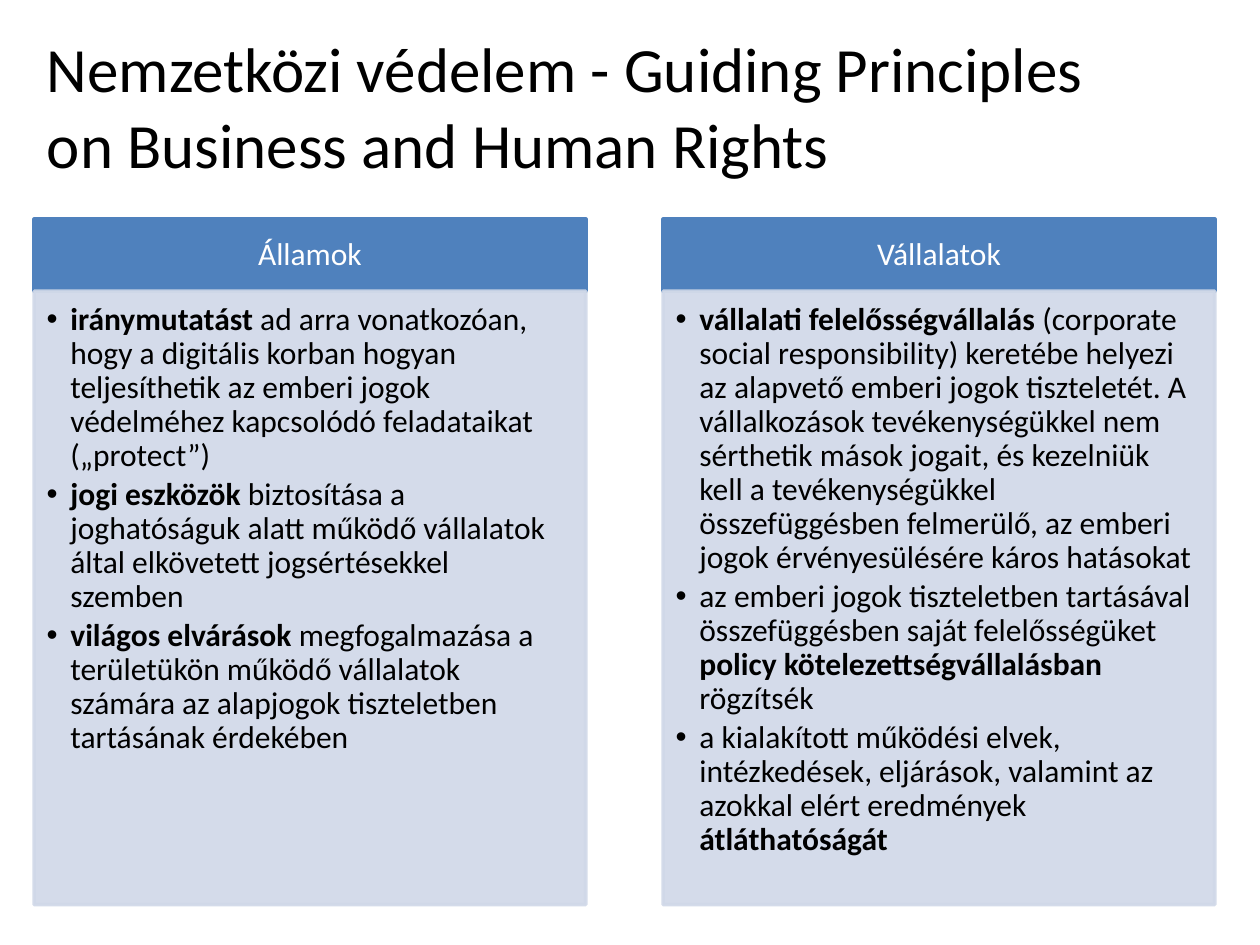
from lxml import etree
from pptx import Presentation
from pptx import util as u
from pptx.dml.color import RGBColor
from pptx.enum import shapes, text
from pptx.oxml.ns import qn

COLORS = {"ink": "000000", "paper": "FFFFFF", "header": "4F81BD", "body": "D0D8E8"}

TITLE = "Nemzetközi védelem - Guiding Principles on Business and Human Rights"

# Each bullet is a list of (text, bold) runs.
COLUMNS = [
    ("Államok", [
        [("iránymutatást ", True),
         ("ad arra vonatkozóan, hogy a digitális korban hogyan teljesíthetik az emberi "
          "jogok védelméhez kapcsolódó feladataikat („protect”)", False)],
        [("jogi eszközök ", True),
         ("biztosítása a joghatóságuk alatt működő vállalatok által elkövetett "
          "jogsértésekkel szemben", False)],
        [("világos elvárások ", True),
         ("megfogalmazása a területükön működő vállalatok számára az alapjogok "
          "tiszteletben tartásának érdekében", False)],
    ]),
    ("Vállalatok", [
        [("vállalati felelősségvállalás ", True),
         ("(corporate social responsibility) keretébe helyezi az alapvető emberi jogok "
          "tiszteletét. A vállalkozások tevékenységükkel nem sérthetik mások jogait, és "
          "kezelniük kell a tevékenységükkel összefüggésben felmerülő, az emberi jogok "
          "érvényesülésére káros hatásokat", False)],
        [("az emberi jogok tiszteletben tartásával összefüggésben saját "
          "felelősségüket ", False),
         ("policy kötelezettségvállalásban ", True),
         ("rögzítsék", False)],
        [("a kialakított működési elvek, intézkedések, eljárások, valamint az azokkal "
          "elért eredmények ", False),
         ("átláthatóságát", True)],
    ]),
]

LEFT, COLUMN_WIDTH, COLUMN_STEP = 0.69, 11.12, 12.68
HEADER_TOP, HEADER_HEIGHT, BODY_HEIGHT = 4.42, 1.45, 12.37


class ColumnSlide:
    font_name = "Calibri"
    title_size = u.Pt(36)
    text_size = u.Pt(18)
    bullet_gap = u.Pt(2.7)
    indent = u.Cm(0.48)

    def __init__(self, presentation):
        self.slide = presentation.slides.add_slide(presentation.slide_layouts[5])

    def format_text(self, paragraph, size, color):
        """Style the paragraph and its runs, as some viewers skip paragraph fonts."""
        for font in (paragraph.font, *(run.font for run in paragraph.runs)):
            font.name = self.font_name
            font.size = size
            font.color.rgb = RGBColor.from_string(COLORS[color])

    def title(self, words, left, top, width, height):
        shape = self.slide.shapes.title
        shape.left, shape.top, shape.width, shape.height = map(
            u.Cm, (left, top, width, height))
        frame = shape.text_frame
        frame.text = words
        frame.vertical_anchor = text.MSO_ANCHOR.MIDDLE
        paragraph = frame.paragraphs[0]
        paragraph.alignment = text.PP_ALIGN.LEFT
        self.format_text(paragraph, self.title_size, "ink")

    def box(self, left, top, width, height, color, margins, opacity=100):
        """Draw a filled rectangle and return its empty text frame."""
        shape = self.slide.shapes.add_shape(
            shapes.MSO_SHAPE.RECTANGLE, *map(u.Cm, (left, top, width, height)))
        shape.shadow.inherit = False
        shape.line.width = u.Pt(2)
        for fill in (shape.fill, shape.line.fill):
            fill.solid()
            fill.fore_color.rgb = RGBColor.from_string(COLORS[color])
        if opacity < 100:
            for node in shape._element.spPr.iter(qn("a:srgbClr")):
                etree.SubElement(node, qn("a:alpha"), val=str(opacity * 1000))
        frame = shape.text_frame
        frame.word_wrap = True
        (frame.margin_left, frame.margin_top,
         frame.margin_right, frame.margin_bottom) = map(u.Cm, margins)
        return frame

    def header(self, words, left, top, width, height):
        frame = self.box(left, top, width, height, "header", (0.36, 0.2, 0.36, 0.2))
        frame.text = words
        frame.vertical_anchor = text.MSO_ANCHOR.MIDDLE
        paragraph = frame.paragraphs[0]
        paragraph.alignment = text.PP_ALIGN.CENTER
        paragraph.line_spacing = 0.9
        self.format_text(paragraph, self.text_size, "paper")

    def bullets(self, items, left, top, width, height):
        frame = self.box(left, top, width, height, "body",
                         (0.25, 0.25, 0.36, 0.41), opacity=90)
        frame.vertical_anchor = text.MSO_ANCHOR.TOP
        for index, runs in enumerate(items):
            paragraph = frame.add_paragraph() if index else frame.paragraphs[0]
            paragraph.level = 1
            paragraph.alignment = text.PP_ALIGN.LEFT
            paragraph.line_spacing = 0.9
            paragraph.space_after = self.bullet_gap
            self.add_bullet(paragraph)
            for words, bold in runs:
                run = paragraph.add_run()
                run.text = words
                run.font.bold = bold
            self.format_text(paragraph, self.text_size, "ink")

    def add_bullet(self, paragraph):
        properties = paragraph._p.get_or_add_pPr()
        properties.set("marL", str(self.indent))
        properties.set("indent", str(-self.indent))
        etree.SubElement(properties, qn("a:buFont"), typeface="Arial")
        etree.SubElement(properties, qn("a:buChar"), char="•")


def main():
    presentation = Presentation()
    presentation.slide_width, presentation.slide_height = u.Cm(25.4), u.Cm(19.05)
    slide = ColumnSlide(presentation)
    slide.title(TITLE, LEFT, 0.53, 22.86, 3.18)
    for index, (heading, items) in enumerate(COLUMNS):
        left = LEFT + index * COLUMN_STEP
        slide.header(heading, left, HEADER_TOP, COLUMN_WIDTH, HEADER_HEIGHT)
        slide.bullets(items, left, HEADER_TOP + HEADER_HEIGHT, COLUMN_WIDTH, BODY_HEIGHT)
    presentation.save("out.pptx")


if __name__ == "__main__":
    main()
